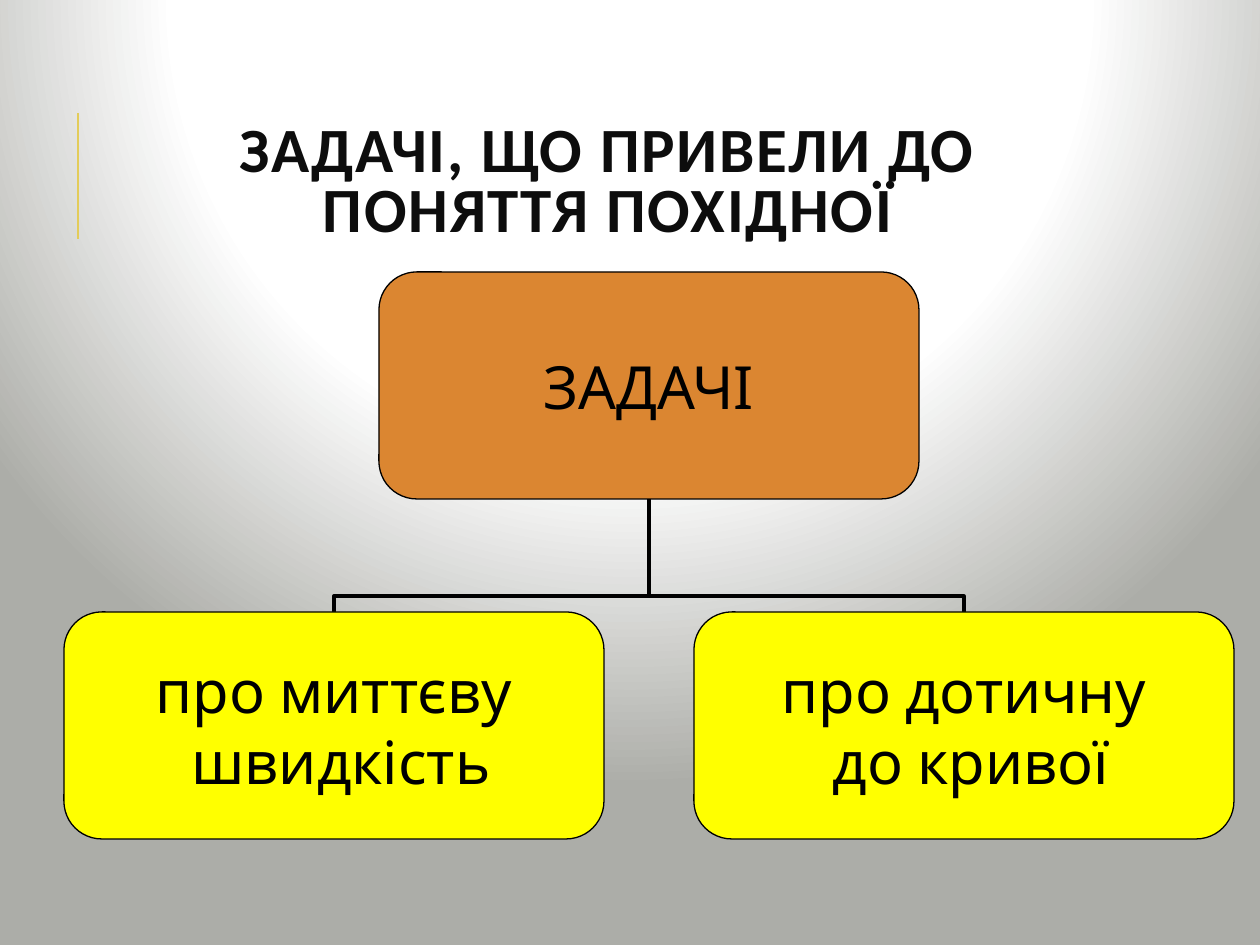
from lxml import etree
from pptx import Presentation
from pptx import util as u
from pptx.dml.color import RGBColor
from pptx.enum import shapes, text
from pptx.oxml import parse_xml
from pptx.oxml.ns import nsdecls, qn

PX = u.Inches(1) / 126
BLACK = RGBColor(0x00, 0x00, 0x00)
TITLE_COLOR = RGBColor(0x0D, 0x0D, 0x0D)
GOLD = RGBColor(0xE3, 0xCC, 0x5A)
ORANGE = RGBColor(0xDB, 0x86, 0x31)
YELLOW = RGBColor(0xFF, 0xFF, 0x00)
WHITE = RGBColor(0xFF, 0xFF, 0xFF)
GREY = RGBColor(0xAC, 0xAD, 0xA8)

BOX_WIDTH, BOX_HEIGHT = 540, 227
ROOT_CENTER, ROOT_TOP = 649, 272
CHILD_TOP, CHILD_OFFSET = 612, 315


def px(*lengths):
    return [u.Emu(round(length * PX)) for length in lengths]


def apply(target, **values):
    for name, value in values.items():
        setattr(target, name, value)


def set_background(slide):
    """Radial gradient centred above the slide."""
    slide.background.fill.solid()
    properties = slide.element.find(".//" + qn("p:bgPr"))
    stops = "".join(
        f'<a:gs pos="{position}000"><a:srgbClr val="{color}"/></a:gs>'
        for position, color in ((0, WHITE), (58, WHITE), (100, GREY)))
    gradient = parse_xml(
        f'<a:gradFill {nsdecls("a")} rotWithShape="1"><a:gsLst>{stops}</a:gsLst>'
        '<a:path path="circle"><a:fillToRect l="50000" t="-80000" r="50000" b="180000"/>'
        '</a:path></a:gradFill>')
    properties.replace(properties[0], gradient)


def add_title(slide, words):
    title = slide.shapes.title
    left, top, width, height = px(106, 81, 1004, 207)
    apply(title, left=left, top=top, width=width, height=height)
    apply(title.text_frame, word_wrap=True, auto_size=text.MSO_AUTO_SIZE.NONE,
          vertical_anchor=text.MSO_ANCHOR.MIDDLE)
    paragraph = title.text_frame.paragraphs[0]
    apply(paragraph, alignment=text.PP_ALIGN.CENTER, line_spacing=0.8)
    run = paragraph.add_run()
    run.text = words
    apply(run.font, name="Calibri", size=u.Pt(36), bold=True)
    run.font.color.rgb = TITLE_COLOR
    run.font._element.set("spc", "100")


def add_line(slide, kind, ends, color, width):
    line = slide.shapes.add_connector(kind, *px(*ends))
    line.line.color.rgb = color
    line.line.width = u.Pt(width)
    etree.SubElement(line.element.spPr, qn("a:effectLst"))
    return line


def add_branch(slide, side):
    """Elbow from a child box up to the root; side is -1 for left, 1 for right."""
    root_bottom = ROOT_TOP + BOX_HEIGHT
    drop = CHILD_TOP - root_bottom
    middle_x = ROOT_CENTER + side * CHILD_OFFSET / 2
    middle_y = root_bottom + drop / 2
    ends = (middle_x + side * drop / 2, middle_y - CHILD_OFFSET / 2,
            middle_x - side * drop / 2, middle_y + CHILD_OFFSET / 2)
    branch = add_line(slide, shapes.MSO_CONNECTOR.ELBOW, ends, BLACK, 2.25)
    properties = branch.element.spPr
    properties.find(qn("a:xfrm")).set("rot", str(side * 90 % 360 * 60000))
    adjustments = properties.find(".//" + qn("a:avLst"))
    etree.SubElement(adjustments, qn("a:gd"), name="adj1", fmla="val 13900")


def add_box(slide, center, top, color, lines):
    box = slide.shapes.add_shape(
        shapes.MSO_SHAPE.ROUNDED_RECTANGLE,
        *px(center - BOX_WIDTH / 2, top, BOX_WIDTH, BOX_HEIGHT))
    box.shadow.inherit = False
    box.fill.solid()
    box.fill.fore_color.rgb = color
    box.line.color.rgb = BLACK
    box.line.width = u.Pt(0.75)
    frame = box.text_frame
    apply(frame, margin_left=0, margin_top=0, margin_right=0, margin_bottom=0,
          word_wrap=False, vertical_anchor=text.MSO_ANCHOR.MIDDLE)
    frame.text = "\n".join(lines)
    for paragraph in frame.paragraphs:
        paragraph.alignment = text.PP_ALIGN.CENTER
        font = paragraph.runs[0].font
        apply(font, name="Karla", size=u.Pt(34))
        font.color.rgb = BLACK


def main():
    presentation = Presentation()
    apply(presentation, slide_width=u.Inches(10), slide_height=u.Inches(7.5))
    slide = presentation.slides.add_slide(presentation.slide_layouts[5])
    set_background(slide)
    add_title(slide, "ЗАДАЧІ, ЩО ПРИВЕЛИ ДО ПОНЯТТЯ ПОХІДНОЇ")
    add_line(slide, shapes.MSO_CONNECTOR.STRAIGHT, (78, 239, 78, 113), GOLD, 1.5)
    for side in (1, -1):
        add_branch(slide, side)
    add_box(slide, ROOT_CENTER, ROOT_TOP, ORANGE, ["ЗАДАЧІ"])
    children = ((-1, ["про миттєву", " швидкість"]), (1, ["про дотичну", " до кривої"]))
    for side, lines in children:
        add_box(slide, ROOT_CENTER + side * CHILD_OFFSET, CHILD_TOP, YELLOW, lines)
    presentation.save("out.pptx")


if __name__ == "__main__":
    main()
